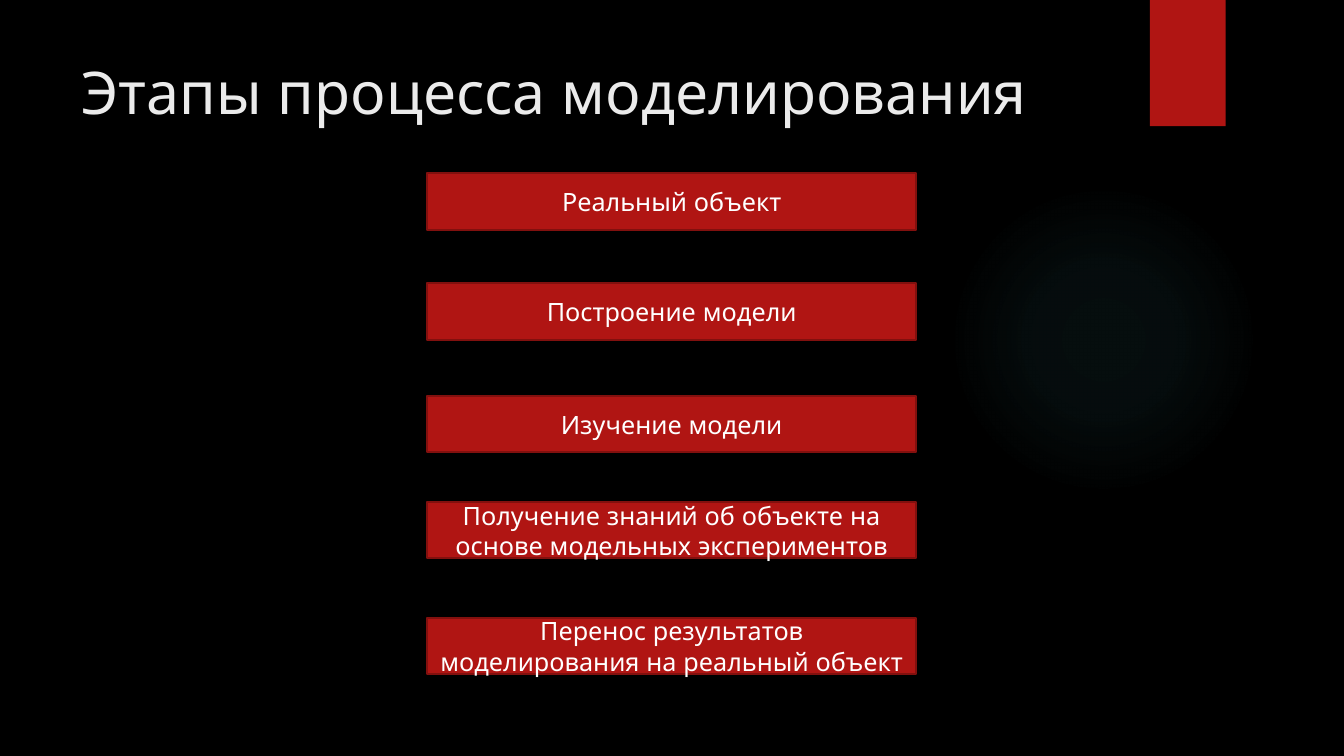
from dataclasses import dataclass

from lxml import etree
from pptx import Presentation
from pptx.dml.color import RGBColor as RGB
from pptx.enum.shapes import MSO_SHAPE as Kind
from pptx.enum.text import MSO_ANCHOR as Anchor, PP_ALIGN as Align
from pptx.oxml import parse_xml
from pptx.oxml.ns import nsdecls, qn
from pptx.util import Cm, Pt


@dataclass(frozen=True)
class Theme:
    font: str = "Quicksand"
    back: str = "000000"
    red: str = "B01513"
    edge: str = "82100E"
    glow: str = "50B9C1"
    head: str = "EBEBEB"
    text: str = "FFFFFF"
    big: int = 42
    body: int = 18


THEME = Theme()

STAGES = [
    (4.37, "Реальный объект"),
    (7.14, "Построение модели"),
    (9.98, "Изучение модели"),
    (12.65, "Получение знаний об объекте на основе модельных экспериментов"),
    (15.57, "Перенос результатов моделирования на реальный объект"),
]


def write(shape, text, size, color, align=Align.LEFT, anchor=Anchor.TOP):
    frame = shape.text_frame
    frame.word_wrap = True
    frame.vertical_anchor = anchor
    para = frame.paragraphs[0]
    para.alignment = align
    run = para.add_run()
    run.text = text
    run.font.name = THEME.font
    run.font.size = Pt(size)
    run.font.color.rgb = RGB.from_string(color)


def add_form(slide, kind, box, fill=THEME.red, edge=None):
    shape = slide.shapes.add_shape(kind, *map(Cm, box))
    shape.shadow.inherit = False
    shape.fill.solid()
    shape.fill.fore_color.rgb = RGB.from_string(fill)
    if edge:
        shape.line.color.rgb = RGB.from_string(edge)
        shape.line.width = Pt(1.5)
    else:
        shape.line.fill.background()
    return shape


def add_glow(slide, box, stops):
    """Draw a round glow; stops are (position, opacity) in percent."""
    shape = add_form(slide, Kind.OVAL, box, fill=THEME.glow)
    grad = parse_xml(
        f'<a:gradFill {nsdecls("a")} rotWithShape="1"><a:gsLst/>'
        '<a:path path="circle">'
        '<a:fillToRect l="50000" t="50000" r="50000" b="50000"/>'
        '</a:path></a:gradFill>')
    for pos, alpha in stops:
        stop = etree.SubElement(grad[0], qn("a:gs"), pos=str(pos * 1000))
        color = etree.SubElement(stop, qn("a:srgbClr"), val=THEME.glow)
        etree.SubElement(color, qn("a:alpha"), val=str(alpha * 1000))
    props = shape.element.spPr
    props.replace(props.find(qn("a:solidFill")), grad)


def add_title(slide, text, box):
    shape = slide.shapes.add_textbox(*map(Cm, box))
    write(shape, text, THEME.big, THEME.head)


def add_stage(slide, top, text):
    shape = add_form(slide, Kind.RECTANGLE, (10.77, top, 12.32, 1.42),
                     edge=THEME.edge)
    write(shape, text, THEME.body, THEME.text, Align.CENTER, Anchor.MIDDLE)


def main():
    deck = Presentation()
    deck.slide_width, deck.slide_height = Cm(33.87), Cm(19.05)
    slide = deck.slides.add_slide(deck.slide_layouts[6])
    back = slide.background.fill
    back.solid()
    back.fore_color.rgb = RGB.from_string(THEME.back)

    add_glow(slide, (23.9, 4.65, 7.82, 7.82), [(0, 7), (36, 6), (69, 0)])
    add_form(slide, Kind.RECTANGLE, (28.98, 0, 1.91, 3.18))
    add_title(slide, "Этапы процесса моделирования", (1.8, 1.27, 26.14, 2.36))
    for top, text in STAGES:
        add_stage(slide, top, text)
    deck.save("out.pptx")


if __name__ == "__main__":
    main()
